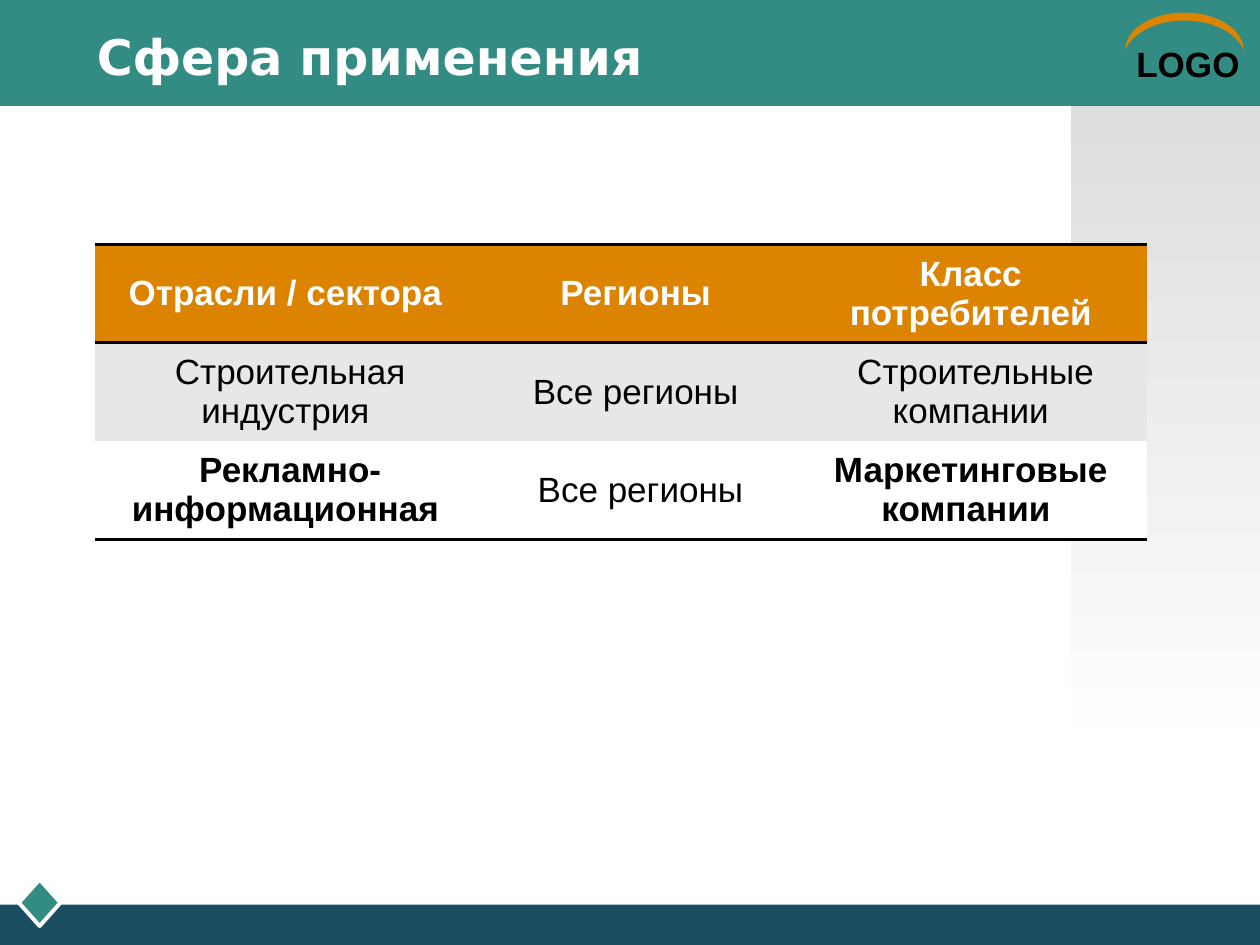
from lxml import etree
from pptx import Presentation
from pptx.dml.color import RGBColor
from pptx.enum.shapes import MSO_SHAPE
from pptx.enum.text import MSO_ANCHOR, PP_ALIGN
from pptx.oxml.ns import qn
from pptx.util import Inches, Pt

MIDDLE, TOP = MSO_ANCHOR.MIDDLE, MSO_ANCHOR.TOP
LEFT, CENTER = PP_ALIGN.LEFT, PP_ALIGN.CENTER

# Content
TITLE = "Сфера применения"
LOGO_TEXT = "LOGO"
ROWS = [
    ["Отрасли / сектора", "Регионы", "Класс потребителей"],
    [" Строительная индустрия", "Все регионы", " Строительные компании"],
    [" Рекламно-информационная", " Все регионы", "Маркетинговые компании "],
]
BOLD_CELLS = {(0, 0), (0, 1), (0, 2), (2, 0), (2, 2)}
ROW_FILLS = ["DC8300", "E7E7E7", "FFFFFF"]

# Layout in inches and colours
WIDTH, HEIGHT = 10, 7.5
HEADER_HEIGHT, FOOTER_HEIGHT = 0.84, 0.32
PANEL_WIDTH, PANEL_HEIGHT = 1.5, 5.25
TABLE_LEFT, TABLE_TOP = 0.75, 1.94
COLUMN_WIDTHS = [3.03, 2.53, 2.79]
ROW_HEIGHT = 0.78
TEAL, NAVY, ORANGE = "328C83", "1B4E63", "DC8300"
WHITE, BLACK, GRAY = "FFFFFF", "000000", "DDDDDD"


def color(value):
    return RGBColor.from_string(value)


def write(frame, text, size=20, font="Arial", ink=BLACK, bold=False, align=LEFT):
    para = frame.paragraphs[0]
    para.alignment = align
    span = para.add_run()
    span.text = text
    span.font.size = Pt(size)
    span.font.name = font
    span.font.bold = bold
    span.font.color.rgb = color(ink)


def add_text(page, text, box, anchor=TOP, **style):
    frame = page.shapes.add_textbox(*map(Inches, box)).text_frame
    frame.word_wrap = True
    frame.vertical_anchor = anchor
    write(frame, text, **style)


def add_block(page, kind, box, fill=None, line=None):
    shape = page.shapes.add_shape(kind, *map(Inches, box))
    shape.shadow.inherit = False
    if fill:
        shape.fill.solid()
        shape.fill.fore_color.rgb = color(fill)
    if line:
        shape.line.color.rgb = color(line)
        shape.line.width = Pt(2.25)
    else:
        shape.line.fill.background()
    return shape


def set_borders(cell, ruled):
    """Draw black rules on the named sides and clear the others."""
    properties = cell._tc.get_or_add_tcPr()
    for side in "LRTB":
        line = etree.SubElement(properties, qn(f"a:ln{side}"))
        if side in ruled:
            line.set("w", str(Pt(2)))
            fill = etree.SubElement(line, qn("a:solidFill"))
            etree.SubElement(fill, qn("a:srgbClr"), val=BLACK)
        else:
            etree.SubElement(line, qn("a:noFill"))


def add_background(page):
    # Bars and diamond
    add_block(page, MSO_SHAPE.RECTANGLE, (0, 0, WIDTH, HEADER_HEIGHT), TEAL)
    footer = (0, HEIGHT - FOOTER_HEIGHT, WIDTH, FOOTER_HEIGHT)
    add_block(page, MSO_SHAPE.RECTANGLE, footer, NAVY)
    add_block(page, MSO_SHAPE.DIAMOND, (0.15, 6.98, 0.33, 0.37), TEAL, WHITE)

    # Label under an arc
    add_text(page, LOGO_TEXT, (8.92, 0.29, 1.08, 0.43), bold=True)
    arc = add_block(page, MSO_SHAPE.MOON, (9.25, -0.22, 0.3, 0.94), ORANGE)
    arc.rotation = 90
    arc.adjustments[0] = 0.21

    # Fading side panel
    box = (WIDTH - PANEL_WIDTH, HEADER_HEIGHT, PANEL_WIDTH, PANEL_HEIGHT)
    panel = add_block(page, MSO_SHAPE.RECTANGLE, box)
    panel.fill.gradient()
    panel.fill.gradient_angle = 270
    for stop, position, shade in zip(panel.fill.gradient_stops, (0, 1), (GRAY, WHITE)):
        stop.position = position
        stop.color.rgb = color(shade)


def add_scope_table(page):
    box = (TABLE_LEFT, TABLE_TOP, sum(COLUMN_WIDTHS), ROW_HEIGHT * len(ROWS))
    table = page.shapes.add_table(
        len(ROWS), len(COLUMN_WIDTHS), *map(Inches, box)).table
    for column, width in zip(table.columns, COLUMN_WIDTHS):
        column.width = Inches(width)
    ruled_sides = ["TB", "T", "B"]
    for r, texts in enumerate(ROWS):
        table.rows[r].height = Inches(ROW_HEIGHT)
        for c, text in enumerate(texts):
            cell = table.cell(r, c)
            cell.vertical_anchor = MIDDLE
            set_borders(cell, ruled_sides[r])
            cell.fill.solid()
            cell.fill.fore_color.rgb = color(ROW_FILLS[r])
            write(cell.text_frame, text, bold=(r, c) in BOLD_CELLS,
                  ink=BLACK if r else WHITE, align=CENTER)


def main():
    deck = Presentation()
    deck.slide_width, deck.slide_height = Inches(WIDTH), Inches(HEIGHT)
    page = deck.slides.add_slide(deck.slide_layouts[6])
    add_background(page)
    add_text(page, TITLE, (0.67, 0.13, 8.66, 0.62), MIDDLE,
             size=28, font="DejaVu Sans", ink=WHITE, bold=True)
    add_scope_table(page)
    deck.save("out.pptx")


if __name__ == "__main__":
    main()
